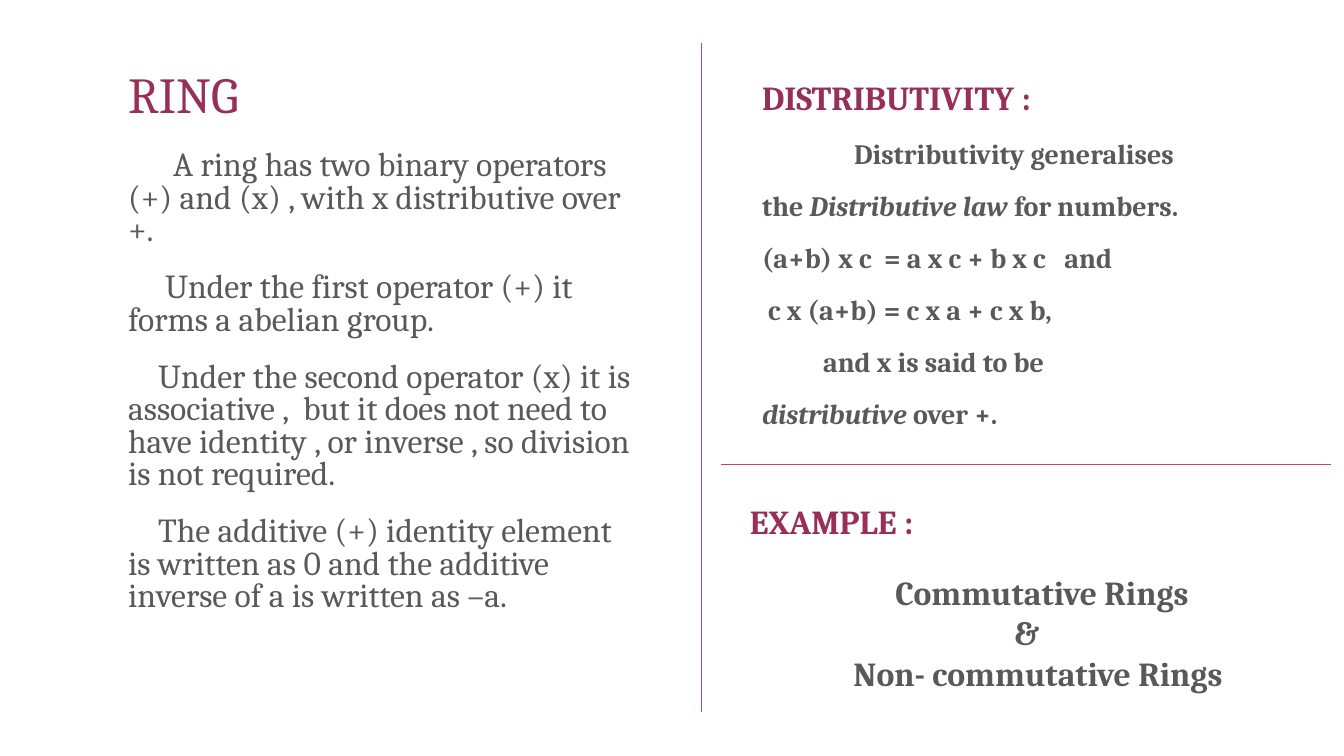
import pptx
import pptx.util
import pptx.dml.color
import pptx.enum.shapes
import pptx.enum.text
import pptx.oxml
import pptx.oxml.ns

PX_PER_INCH = 100.8
BERRY, GREY, RULE = "972F57", "595959", "C44475"
ALIGN = pptx.enum.text.PP_ALIGN


def emu(px):
    return pptx.util.Emu(round(px * 914400 / PX_PER_INCH))


def rgb(value):
    return pptx.dml.color.RGBColor.from_string(value)


class SlideBuilder:
    font_name = "Cambria"

    def __init__(self, slide):
        self.slide = slide

    def place(self, shape, left, top, width, height):
        shape.left, shape.top = emu(left), emu(top)
        shape.width, shape.height = emu(width), emu(height)
        frame = shape.text_frame
        frame.word_wrap = True
        frame.auto_size = pptx.enum.text.MSO_AUTO_SIZE.NONE
        return frame

    def set_paragraph(self, paragraph, text, size=24, color=GREY, bold=False, indent=0,
                      tab=None, align=ALIGN.LEFT, spacing=1.0, before=0):
        """Fill a paragraph; parts of the text between asterisks are italic."""
        properties = paragraph._p.get_or_add_pPr()
        properties.set("marL", "0")
        properties.set("indent", str(emu(indent)))
        properties.append(pptx.oxml.parse_xml(
            f'<a:buNone {pptx.oxml.ns.nsdecls("a")}/>'))
        if tab:
            properties.append(pptx.oxml.parse_xml(
                f'<a:tabLst {pptx.oxml.ns.nsdecls("a")}>'
                f'<a:tab pos="{emu(tab)}" algn="l"/></a:tabLst>'))
        paragraph.alignment = align
        paragraph.line_spacing = spacing
        paragraph.space_before = pptx.util.Pt(before)
        for number, part in enumerate(text.split("*")):
            if part:
                run = paragraph.add_run()
                run.text = part
                run.font.name = self.font_name
                run.font.size = pptx.util.Pt(size)
                run.font.bold = bold
                run.font.italic = number % 2 == 1
                run.font.color.rgb = rgb(color)

    def title(self, text, *box):
        frame = self.place(self.slide.shapes.title, *box)
        frame.vertical_anchor = pptx.enum.text.MSO_ANCHOR.BOTTOM
        self.set_paragraph(frame.paragraphs[0], text, size=36, color=BERRY, spacing=0.9)

    def fill(self, frame, lines, gap=0, **style):
        """Set (text, own style) lines, with a gap before all but the first."""
        for number, (text, own) in enumerate(lines):
            paragraph = frame.add_paragraph() if number else frame.paragraphs[0]
            before = gap if number else 0
            self.set_paragraph(paragraph, text, **{"before": before, **style, **own})

    def body(self, index, lines, *box, **style):
        frame = self.place(self.slide.placeholders[index], *box)
        frame.vertical_anchor = pptx.enum.text.MSO_ANCHOR.TOP
        self.fill(frame, lines, gap=18, spacing=0.8, **style)

    def text_box(self, lines, *box, **style):
        frame = self.place(self.slide.shapes.add_textbox(0, 0, 0, 0), *box)
        self.fill(frame, lines, **style)

    def line(self, *ends):
        connector = self.slide.shapes.add_connector(
            pptx.enum.shapes.MSO_CONNECTOR.STRAIGHT, *map(emu, ends))
        connector.line.color.rgb = rgb(RULE)
        connector.line.width = pptx.util.Pt(0.5)
        connector._element.spPr.append(pptx.oxml.parse_xml(
            f'<a:effectLst {pptx.oxml.ns.nsdecls("a")}/>'))


def main():
    presentation = pptx.Presentation()
    presentation.slide_width, presentation.slide_height = emu(1344), emu(756)
    two_content = presentation.slide_layouts[3]
    builder = SlideBuilder(presentation.slides.add_slide(two_content))
    heading = {"size": 24, "color": BERRY}

    builder.title("RING", 118, 50, 1109, 79)
    builder.body(1, [
        ("A ring has two binary operators (+) and (x) , with x distributive over +.",
         {"indent": 45}),
        ("Under the first operator (+) it forms a abelian group.", {"indent": 37}),
        ("Under the second operator (x) it is associative ,  but it does not need to "
         "have identity , or inverse , so division is not required.", {"indent": 30}),
        ("The additive (+) identity element is written as 0 and the additive inverse "
         "of a is written as –a.", {"indent": 30}),
    ], 118, 146, 529, 588)
    builder.body(2, [
        ("DISTRIBUTIVITY :", heading),
        ("Distributivity generalises", {"indent": 92}),
        ("the *Distributive law* for numbers.", {}),
        ("(a+b) x c  = a x c + b x c\tand", {"tab": 339}),
        ("c x (a+b) = c x a + c x b,", {"indent": 6}),
        ("and x is said to be", {"indent": 61}),
        ("*distributive* over +.", {}),
    ], 752, 80, 529, 361, size=20, bold=True)

    builder.line(701, 43, 701, 712)
    builder.line(721, 464, 1331, 464)

    builder.text_box([
        ("EXAMPLE :", {**heading, "align": ALIGN.LEFT}),
        ("Commutative Rings", {"indent": 30, "before": 22}),
        ("&", {}),
        ("Non- commutative Rings", {"indent": 22}),
    ], 740, 496, 574, 204, bold=True, align=ALIGN.CENTER)

    presentation.save("out.pptx")


if __name__ == "__main__":
    main()
